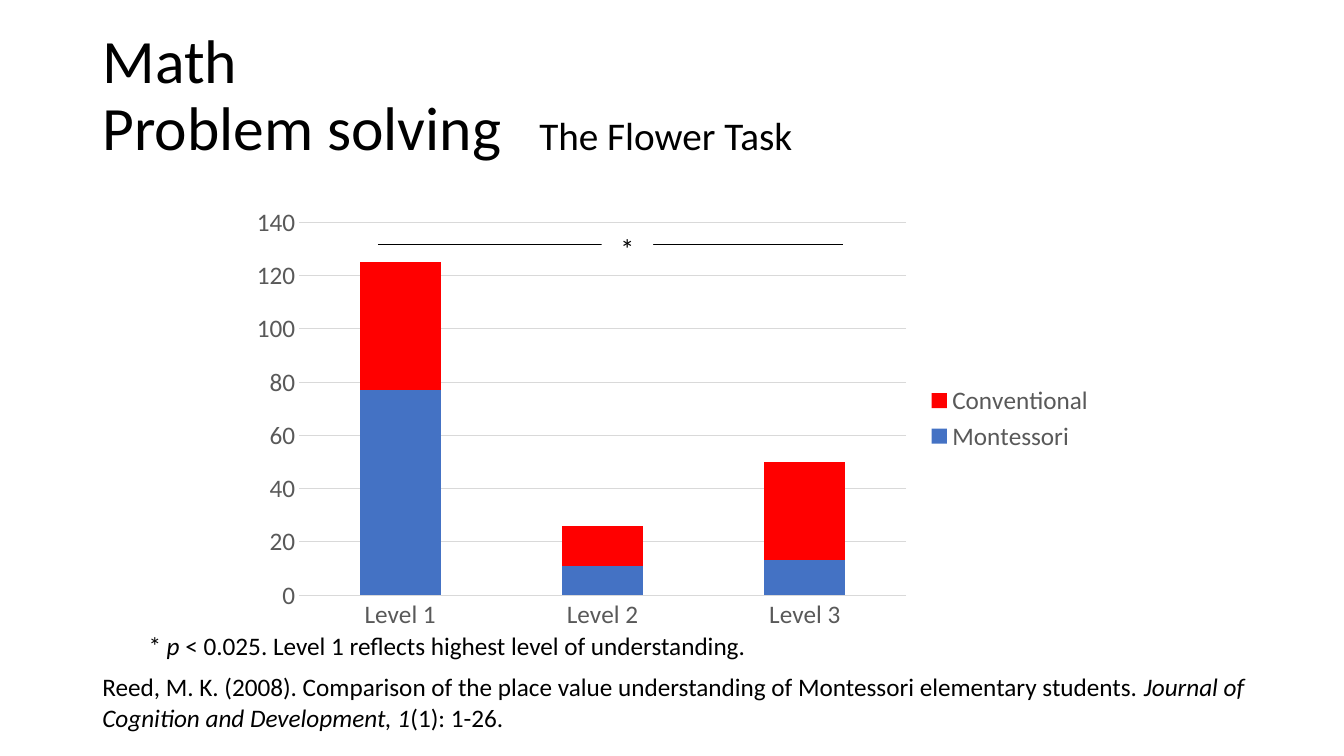
from dataclasses import dataclass

from lxml.etree import SubElement
from pptx import Presentation
from pptx.chart.data import CategoryChartData
from pptx.dml.color import RGBColor
from pptx.enum.chart import XL_CHART_TYPE, XL_LEGEND_POSITION, XL_TICK_MARK
from pptx.enum.shapes import MSO_CONNECTOR, MSO_SHAPE
from pptx.enum.text import MSO_ANCHOR, MSO_AUTO_SIZE, PP_ALIGN
from pptx.oxml.ns import qn
from pptx.slide import Slide
from pptx.text.text import Font, TextFrame
from pptx.util import Pt

PX = 9525
FONT_NAME = "Calibri"
BLACK = RGBColor(0x00, 0x00, 0x00)
WHITE = RGBColor(0xFF, 0xFF, 0xFF)
LABEL_GRAY = RGBColor(0x59, 0x59, 0x59)
GRID_GRAY = RGBColor(0xD9, 0xD9, 0xD9)
BLUE = RGBColor(0x44, 0x72, 0xC4)
RED = RGBColor(0xFF, 0x00, 0x00)


@dataclass(frozen=True)
class Box:
    left: int
    top: int
    width: int
    height: int

    def emu(self) -> tuple[int, int, int, int]:
        return self.left * PX, self.top * PX, self.width * PX, self.height * PX


@dataclass(frozen=True)
class Span:
    text: str
    italic: bool = False
    size: int = 18


@dataclass(frozen=True)
class Footnote:
    box: Box
    wrap: bool
    spans: tuple[Span, ...]


@dataclass(frozen=True)
class SchoolSeries:
    name: str
    values: tuple[int, ...]
    color: RGBColor


LEVELS = ("Level 1", "Level 2", "Level 3")
SCHOOLS = (
    SchoolSeries("Montessori", (77, 11, 13), BLUE),
    SchoolSeries("Conventional", (48, 15, 37), RED),
)
TITLE_LINES = (
    (Span("Math", size=44),),
    (Span("Problem solving\t", size=44), Span("The Flower Task", size=28)),
)
SUBTITLE_TAB = 416
FOOTNOTES = (
    Footnote(Box(132, 596, 601, 38), False, (
        Span("*"),
        Span(" p", italic=True),
        Span(" < 0.025. Level 1 reflects highest level of understanding."),
    )),
    Footnote(Box(88, 635, 1114, 68), True, (
        Span("Reed, M. K. (2008). Comparison of the place value understanding "
             "of Montessori elementary students. "),
        Span("Journal of Cognition and Development, 1", italic=True),
        Span("(1): 1-26."),
    )),
)


def style_font(font: Font, size: int, color: RGBColor) -> None:
    font.name = FONT_NAME
    font.size = Pt(size)
    font.color.rgb = color


def write_spans(frame: TextFrame, spans: tuple[Span, ...]) -> None:
    for span in spans:
        run = frame.paragraphs[0].add_run()
        run.text = span.text
        style_font(run.font, span.size, BLACK)
        if span.italic:
            run.font.italic = True


def add_title(slide: Slide) -> None:
    title = slide.shapes.title
    title.left, title.top, title.width, title.height = Box(88, 23, 1104, 139).emu()
    frame = title.text_frame
    frame.word_wrap = True
    frame.auto_size = MSO_AUTO_SIZE.NONE
    frame.vertical_anchor = MSO_ANCHOR.MIDDLE
    paragraph = frame.paragraphs[0]
    paragraph.alignment = PP_ALIGN.LEFT
    paragraph.line_spacing = 0.9
    tab_list = SubElement(paragraph._p.get_or_add_pPr(), qn("a:tabLst"))
    SubElement(tab_list, qn("a:tab"), pos=str(SUBTITLE_TAB * PX), algn="l")
    first_line, second_line = TITLE_LINES
    write_spans(frame, first_line)
    paragraph.add_line_break()
    write_spans(frame, second_line)


def add_level_chart(slide: Slide) -> None:
    data = CategoryChartData()
    data.categories = LEVELS
    for school in SCHOOLS:
        data.add_series(school.name, school.values)
    chart = slide.shapes.add_chart(
        XL_CHART_TYPE.COLUMN_STACKED, *Box(228, 189, 824, 419).emu(), data
    ).chart
    style_font(chart.font, 18, LABEL_GRAY)
    chart.has_title = False
    chart.has_legend = True
    chart.legend.position = XL_LEGEND_POSITION.RIGHT
    chart.legend.include_in_layout = False
    style_font(chart.legend.font, 18, LABEL_GRAY)

    plot = chart.plots[0]
    plot.gap_width = 150
    plot.overlap = 100
    plot.vary_by_categories = False
    for series, school in zip(plot.series, SCHOOLS):
        series.format.fill.solid()
        series.format.fill.fore_color.rgb = school.color

    for axis in (chart.category_axis, chart.value_axis):
        axis.major_tick_mark = XL_TICK_MARK.NONE
        axis.minor_tick_mark = XL_TICK_MARK.NONE
        axis.format.line.fill.background()
        style_font(axis.tick_labels.font, 18, LABEL_GRAY)
    value_axis = chart.value_axis
    value_axis.minimum_scale = 0
    value_axis.maximum_scale = 140
    value_axis.major_unit = 20
    value_axis.has_major_gridlines = True
    grid_line = value_axis.major_gridlines.format.line
    grid_line.color.rgb = GRID_GRAY
    grid_line.width = Pt(0.75)


def add_significance_mark(slide: Slide) -> None:
    """Draw the line across the levels, broken by a star on white."""
    line = slide.shapes.add_connector(
        MSO_CONNECTOR.STRAIGHT, 360 * PX, 233 * PX, 803 * PX, 233 * PX
    )
    line.line.color.rgb = BLACK
    line.line.width = Pt(0.5)
    SubElement(line._element.spPr, qn("a:effectLst"))

    star = slide.shapes.add_shape(MSO_SHAPE.RECTANGLE, *Box(573, 216, 49, 42).emu())
    star.shadow.inherit = False
    star.fill.solid()
    star.fill.fore_color.rgb = WHITE
    star.line.fill.background()
    frame = star.text_frame
    frame.word_wrap = True
    frame.vertical_anchor = MSO_ANCHOR.TOP
    frame.paragraphs[0].alignment = PP_ALIGN.CENTER
    write_spans(frame, (Span("*", size=20),))


def add_footnote(slide: Slide, footnote: Footnote) -> None:
    frame = slide.shapes.add_textbox(*footnote.box.emu()).text_frame
    frame.word_wrap = footnote.wrap
    frame.auto_size = MSO_AUTO_SIZE.SHAPE_TO_FIT_TEXT
    write_spans(frame, footnote.spans)


def main() -> None:
    presentation = Presentation()
    presentation.slide_width = 1280 * PX
    presentation.slide_height = 720 * PX
    slide = presentation.slides.add_slide(
        presentation.slide_layouts.get_by_name("Title Only")
    )
    add_title(slide)
    add_level_chart(slide)
    add_significance_mark(slide)
    for footnote in FOOTNOTES:
        add_footnote(slide, footnote)
    presentation.save("out.pptx")


if __name__ == "__main__":
    main()
